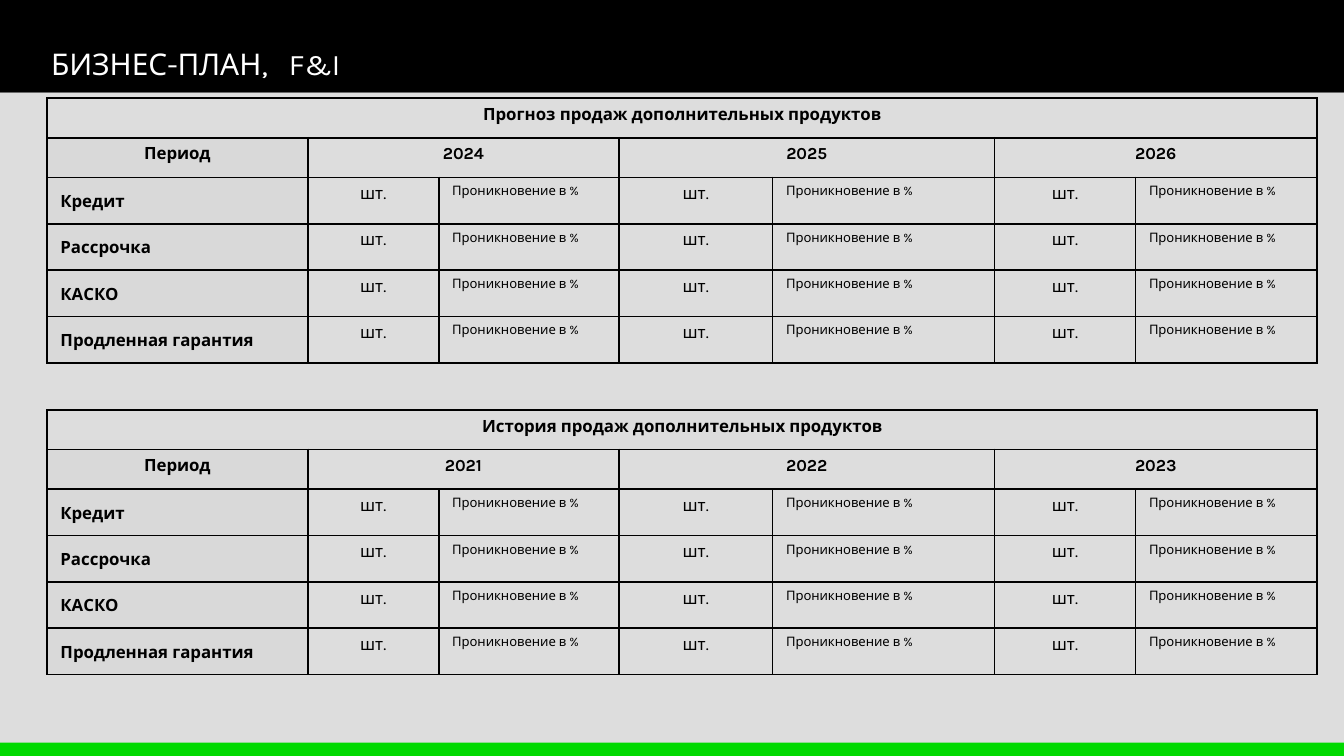
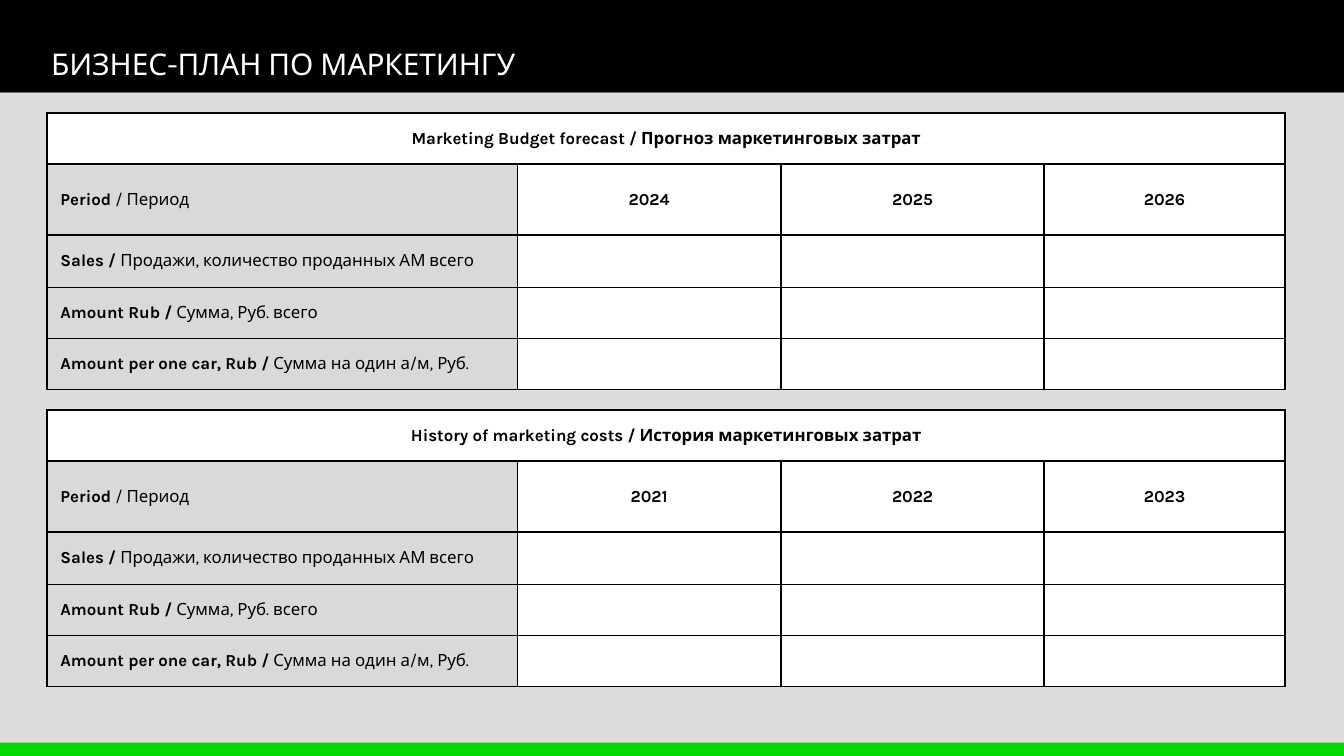
import pptx
import pptx.util
import pptx.dml.color
import pptx.enum.shapes
import pptx.enum.text
import lxml.etree

ALIGN = pptx.enum.text.PP_ALIGN
ANCHOR = pptx.enum.text.MSO_ANCHOR
NS = "{http://schemas.openxmlformats.org/drawingml/2006/main}"
COLS, ROWS = 100, 56.25  # grid of tenth-inch units
BLACK, WHITE, PALE, GREY, GREEN = "000000", "FFFFFF", "DDDDDD", "D9D9D9", "00D900"


def unit(n):
    return pptx.util.Inches(n / 10)


def color(code):
    return pptx.dml.color.RGBColor.from_string(code)


def node(parent, tag, **attrs):
    return lxml.etree.SubElement(parent, NS + tag, **attrs)


class Deck:
    font = "Karla"
    size = 9

    def __init__(self):
        self.file = pptx.Presentation()
        self.file.slide_width = unit(COLS)
        self.file.slide_height = unit(ROWS)
        self.slide = None

    def page(self, title, width, tab=None):
        """Start a slide with its bands and title."""
        self.slide = self.file.slides.add_slide(self.file.slide_layouts[5])
        self.band(0, 6.9, BLACK)
        self.band(6.9, ROWS - 6.9, PALE)
        self.band(ROWS - 1, 1, GREEN)
        self.title(title, width, tab)

    def band(self, top, height, fill):
        kind = pptx.enum.shapes.MSO_SHAPE.RECTANGLE
        box = self.slide.shapes.add_shape(kind, 0, unit(top), unit(COLS), unit(height))
        box.shadow.inherit = False
        box.fill.solid()
        box.fill.fore_color.rgb = color(fill)
        box.line.fill.background()

    def title(self, text, width, tab):
        head = self.slide.shapes.title
        head.element.getparent().append(head.element)  # above the bands
        head.left, head.top = unit(2.8), unit(0.2)
        head.width, head.height = unit(width), unit(5.5)
        frame = head.text_frame
        frame.word_wrap = True
        frame.auto_size = pptx.enum.text.MSO_AUTO_SIZE.SHAPE_TO_FIT_TEXT
        frame.vertical_anchor = ANCHOR.TOP
        para = frame.paragraphs[0]
        if tab:
            stops = node(para._p.get_or_add_pPr(), "tabLst")
            node(stops, "tab", pos=str(unit(tab)), algn="l")
        para.alignment = ALIGN.LEFT
        para.line_spacing = 2.0
        self.run(para, text, 16, False, WHITE)

    def run(self, para, text, size, bold, ink=BLACK):
        run = para.add_run()
        run.text = text
        run.font.name = self.font
        run.font.size = pptx.util.Pt(size)
        run.font.bold = bold
        run.font.color.rgb = color(ink)

    def table(self, top, cols, rows):
        """Add an empty ruled table whose first row is one merged cell."""
        frame = self.slide.shapes.add_table(
            len(rows), len(cols), unit(3.5), unit(top), unit(sum(cols)), unit(sum(rows)))
        grid = frame.table
        grid.first_row = grid.horz_banding = False
        for col, width in zip(grid.columns, cols):
            col.width = unit(width)
        for row, height in zip(grid.rows, rows):
            row.height = unit(height)
        grid.cell(0, 0).merge(grid.cell(0, len(cols) - 1))
        for cell in grid.iter_cells():
            self.rule(cell)
        return grid

    def rule(self, cell):
        props = cell._tc.get_or_add_tcPr()
        for side in ("lnL", "lnR", "lnT", "lnB"):
            line = node(props, side, w=str(pptx.util.Pt(1)))
            node(node(line, "solidFill"), "srgbClr", val=BLACK)
        # Empty cells must not stretch their row
        node(cell.text_frame.paragraphs[0]._p, "endParaRPr", sz=str(self.size * 100))
        cell.fill.background()

    def cell(self, cell, *runs, fill=None, mid=False, align=ALIGN.CENTER, lead=None):
        """Fill a cell; each run is (text, bold) or (text, bold, size)."""
        if fill:
            cell.fill.solid()
            cell.fill.fore_color.rgb = color(fill)
        if mid:
            cell.vertical_anchor = ANCHOR.MIDDLE
            cell.margin_top = cell.margin_bottom = unit(0.4)
        para = cell.text_frame.paragraphs[0]
        para.alignment = align
        if lead:
            para.line_spacing = pptx.util.Pt(lead)
        for text, bold, *size in runs:
            self.run(para, text, size[0] if size else self.size, bold)


def sales(deck, top, head, years):
    """Units and share per product, two columns a year."""
    names = ["Кредит", "Рассрочка", "КАСКО", "Продленная гарантия"]
    grid = deck.table(top, [19.4, 9.75, 13.4, 11.45, 16.5, 10.5, 13.5],
                      [2.95] * 2 + [3.45] * len(names))
    deck.cell(grid.cell(0, 0), (head, True))
    deck.cell(grid.cell(1, 0), ("Период", True), fill=GREY)
    for i, year in enumerate(years):
        col = 1 + 2 * i
        grid.cell(1, col).merge(grid.cell(1, col + 1))
        deck.cell(grid.cell(1, col), (str(year), True))
        for row in range(2, 2 + len(names)):
            deck.cell(grid.cell(row, col), ("шт.", False))
            deck.cell(grid.cell(row, col + 1), ("Проникновение в %", False, 7),
                      align=ALIGN.LEFT)
    for row, name in enumerate(names, 2):
        deck.cell(grid.cell(row, 0), (name, True), fill=GREY, mid=True,
                  align=ALIGN.LEFT, lead=12)


def costs(deck, top, head, years):
    """Marketing costs, one column a year."""
    names = [
        ("Period ", "/ Период"),
        ("Sales / ", "Продажи, количество проданных АМ всего"),
        ("Amount Rub / ", "Сумма, Руб. всего"),
        ("Amount per one car, Rub / ", "Сумма на один а/м, Руб."),
    ]
    grid = deck.table(top, [35, 19.6, 19.6, 17.9], [3.8, 5.3, 3.9, 3.8, 3.8])
    deck.cell(grid.cell(0, 0), (head, True), fill=WHITE, mid=True)
    for row, (name, note) in enumerate(names, 1):
        deck.cell(grid.cell(row, 0), (name, True), (note, False), fill=GREY,
                  mid=True, align=ALIGN.LEFT)
        for col, year in enumerate(years, 1):
            runs = [(str(year), True)] if row == 1 else []
            deck.cell(grid.cell(row, col), *runs, fill=WHITE, mid=True)


def main():
    deck = Deck()
    plan, past = range(2024, 2027), range(2021, 2024)

    # Finance and insurance
    deck.page("БИЗНЕС-ПЛАН,\tF&I", 75.6, tab=17.7)
    sales(deck, 7.3, "Прогноз продаж дополнительных продуктов", plan)
    sales(deck, 30.5, "История продаж дополнительных продуктов", past)

    # Marketing
    deck.page("БИЗНЕС-ПЛАН ПО МАРКЕТИНГУ", 56.3)
    costs(deck, 8.4, "Marketing Budget forecast / Прогноз маркетинговых затрат", plan)
    costs(deck, 30.5, "History of marketing costs / История маркетинговых затрат", past)

    deck.file.save("out.pptx")


if __name__ == "__main__":
    main()
